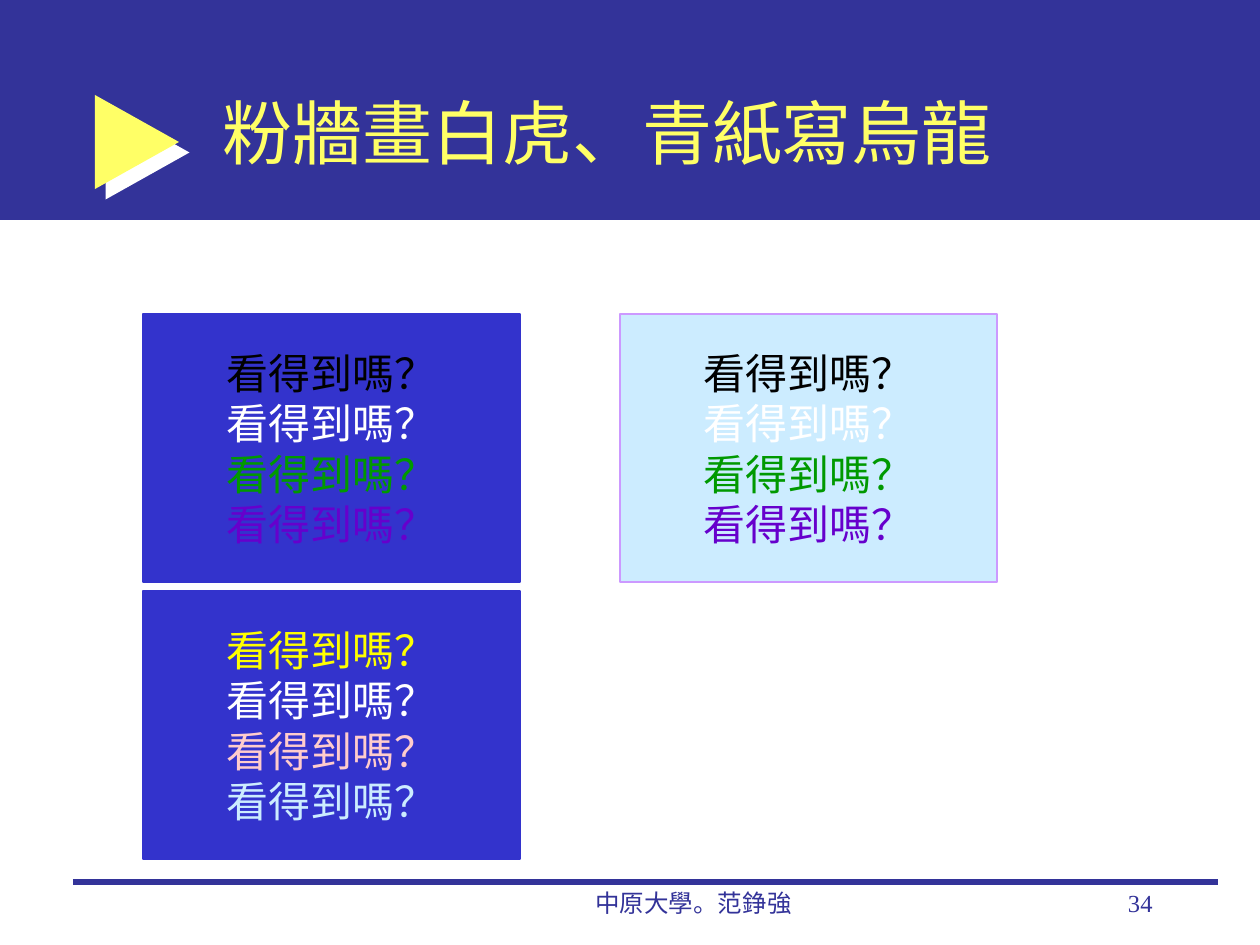
from lxml import etree
from pptx import Presentation
from pptx.dml.color import RGBColor
from pptx.enum.shapes import MSO_CONNECTOR, MSO_SHAPE
from pptx.enum.text import MSO_ANCHOR, MSO_AUTO_SIZE, PP_ALIGN
from pptx.oxml.ns import qn
from pptx.util import Emu, Pt

RECTANGLE, RIGHT_ARROW = MSO_SHAPE.RECTANGLE, MSO_SHAPE.RIGHT_ARROW
STRAIGHT = MSO_CONNECTOR.STRAIGHT
TOP, MIDDLE = MSO_ANCHOR.TOP, MSO_ANCHOR.MIDDLE
LEFT, CENTER, RIGHT = PP_ALIGN.LEFT, PP_ALIGN.CENTER, PP_ALIGN.RIGHT
FIXED = MSO_AUTO_SIZE.NONE

NAVY = RGBColor(0x33, 0x33, 0x99)
BLUE = RGBColor(0x33, 0x33, 0xCC)
PALE_BLUE = RGBColor(0xCC, 0xEC, 0xFF)
LILAC = RGBColor(0xCC, 0x99, 0xFF)
BLACK = RGBColor(0, 0, 0)
WHITE = RGBColor(0xFF, 0xFF, 0xFF)
GREEN = RGBColor(0, 0x99, 0)
PURPLE = RGBColor(0x66, 0, 0xCC)
LEMON = RGBColor(0xFF, 0xFF, 0x66)
YELLOW = RGBColor(0xFF, 0xFF, 0)
PINK = RGBColor(0xFF, 0xCC, 0xCC)

SERIF, SANS = "Times New Roman", "Arial"
PX_PER_INCH = 126
QUESTION = "看得到嗎？"
PANEL_LEFT, PANEL_TOP, PANEL_WIDTH, PANEL_HEIGHT = 143, 314, 377, 268
COLUMN_STEP, ROW_STEP = 477, 277
DARK_INKS = (BLACK, WHITE, GREEN, PURPLE)
LIGHT_INKS = (YELLOW, WHITE, PINK, PALE_BLUE)

# column, row, fill, outline, text colours
PANELS = [
    (0, 0, BLUE, BLUE, DARK_INKS),
    (1, 0, PALE_BLUE, LILAC, DARK_INKS),
    (0, 1, BLUE, BLUE, LIGHT_INKS),
]


def px(*lengths):
    return [Emu(round(length * 914400 / PX_PER_INCH)) for length in lengths]


def write(frame, lines, size, font, align, anchor, wrap=True):
    """Fill a text frame with (text, colour) paragraphs."""
    frame.auto_size = FIXED
    frame.word_wrap = wrap
    frame.vertical_anchor = anchor
    for index, (text, color) in enumerate(lines):
        paragraph = frame.add_paragraph() if index else frame.paragraphs[0]
        paragraph.alignment = align
        run = paragraph.add_run()
        run.text = text
        for key, value in {"size": Pt(size), "name": font}.items():
            setattr(run.font, key, value)
        run.font.color.rgb = color


def add_block(slide, preset, box, fill, outline=None):
    block = slide.shapes.add_shape(preset, *px(*box))
    block.shadow.inherit = False
    block.fill.solid()
    block.fill.fore_color.rgb = fill
    if outline is None:
        block.line.fill.background()
    else:
        block.line.color.rgb = outline
        block.line.width = Pt(0.75)
    return block


def add_marker(slide):
    """Arrowhead with a hard white shadow to the lower right."""
    marker = add_block(slide, RIGHT_ARROW, (95, 95, 84, 94), LEMON)
    marker.adjustments[0], marker.adjustments[1] = 0.38, 1
    effects = marker.element.spPr.find(qn("a:effectLst"))
    shadow = etree.SubElement(effects, qn("a:outerShdw"), dist=str(Pt(8.5)),
                              dir="2700000", algn="ctr", rotWithShape="0")
    etree.SubElement(shadow, qn("a:srgbClr"), val=str(WHITE))


def add_rule(slide, start, end, y):
    rule = slide.shapes.add_connector(STRAIGHT, *px(start, y, end, y))
    rule.line.color.rgb = NAVY
    rule.line.width = Pt(3)
    etree.SubElement(rule.element.spPr, qn("a:effectLst"))


def add_footer(slide, text, box, align):
    footer = slide.shapes.add_textbox(*px(*box))
    write(footer.text_frame, [(text, NAVY)], 14, SERIF, align, TOP)


def place_title(slide, text):
    title = slide.shapes.title
    title.left, title.top, title.width, title.height = px(210, 53, 955, 158)
    write(title.text_frame, [(text, LEMON)], 40, SANS, LEFT, MIDDLE)
    # Bring the title in front of the banner
    slide.shapes.element.append(title.element)


def add_panel(slide, column, row, fill, outline, inks):
    box = (PANEL_LEFT + column * COLUMN_STEP, PANEL_TOP + row * ROW_STEP,
           PANEL_WIDTH, PANEL_HEIGHT)
    panel = add_block(slide, RECTANGLE, box, fill, outline)
    write(panel.text_frame, [(QUESTION, ink) for ink in inks],
          24, SERIF, CENTER, MIDDLE, wrap=False)


def main():
    deck = Presentation()
    deck.slide_width, deck.slide_height = px(1260, 945)
    slide = deck.slides.add_slide(deck.slide_layouts[5])

    # Banner and title
    add_block(slide, RECTANGLE, (0, 0, 1260, 220), NAVY)
    add_marker(slide)
    place_title(slide, "粉牆畫白虎、青紙寫烏龍")

    # Footer
    add_rule(slide, 73, 1218, 882)
    add_footer(slide, "中原大學。范錚強", (494, 882, 399, 63), CENTER)
    add_footer(slide, "34", (903, 882, 262, 63), RIGHT)

    # Contrast samples
    for panel in PANELS:
        add_panel(slide, *panel)

    deck.save("out.pptx")


if __name__ == "__main__":
    main()
